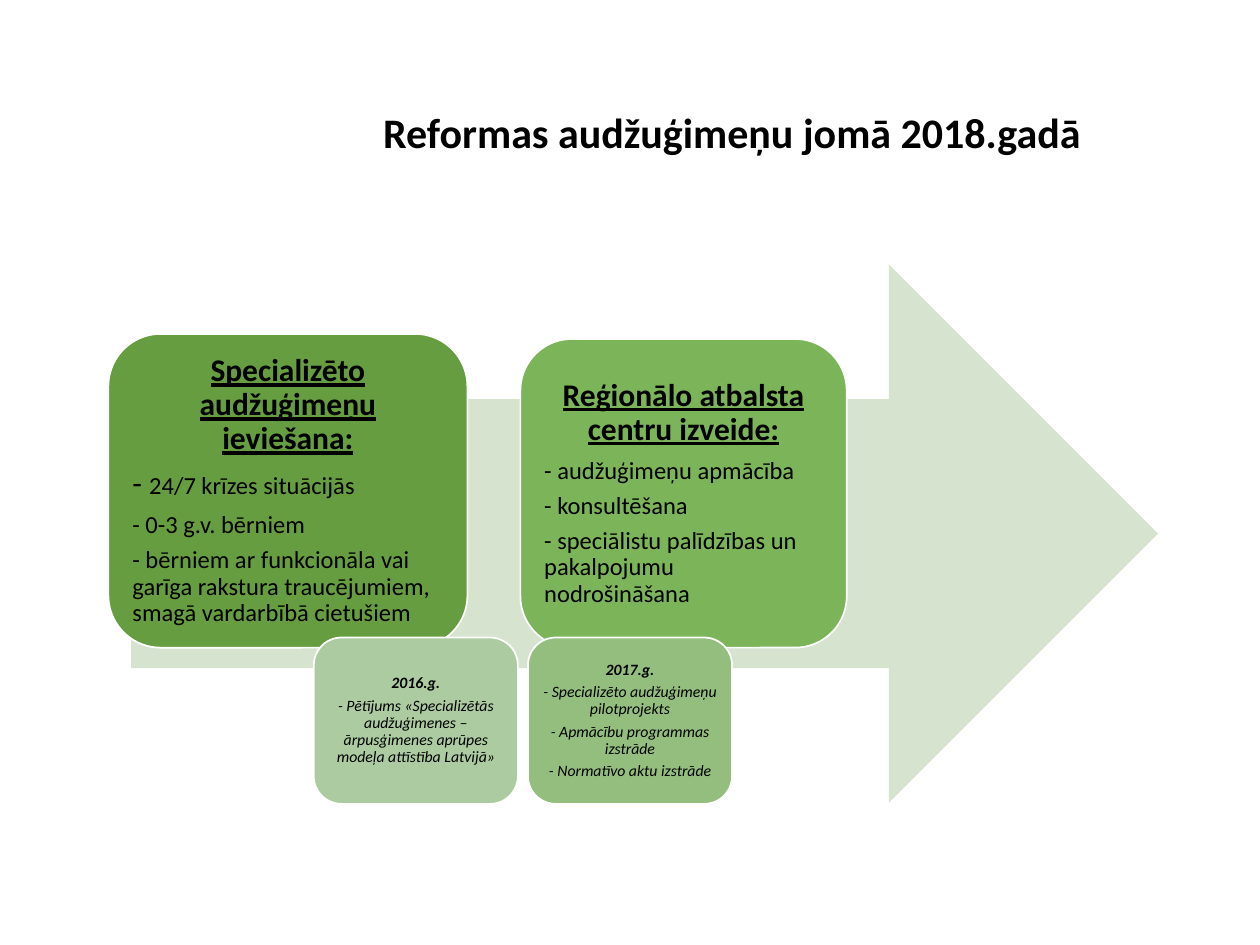
from pptx import Presentation
from pptx.dml.color import RGBColor
from pptx.enum.shapes import MSO_SHAPE
from pptx.enum.text import MSO_ANCHOR, PP_ALIGN
from pptx.util import Inches, Pt

COLORS = {
    "text": "000000",
    "outline": "FFFFFF",
    "arrow": "D5E3CF",
    "specialised": "669D40",
    "regional": "7BB459",
    "year_2017": "94BE7D",
    "year_2016": "ADCBA0",
}
TITLE = {"size": Pt(24), "bold": True}
HEADING = {"size": Pt(18), "bold": True, "underline": True}
LARGE_DASH = {"size": Pt(18)}
BODY = {"size": Pt(14)}
YEAR = {"size": Pt(9), "bold": True, "italic": True}
STEP = {"size": Pt(9), "italic": True}

REFORMS = [
    ("specialised", (0.86, 2.65, 2.85, 2.49), [
        [("Specializēto audžuģimeņu ieviešana:", HEADING)],
        [("- ", LARGE_DASH), ("24/7 krīzes situācijās", BODY)],
        [("- 0-3 g.v. bērniem", BODY)],
        [("- bērniem ar funkcionāla vai garīga rakstura traucējumiem, "
          "smagā vardarbībā cietušiem", BODY)],
    ]),
    ("regional", (4.13, 2.69, 2.59, 2.45), [
        [("Reģionālo atbalsta centru izveide:", HEADING)],
        [("- audžuģimeņu apmācība", BODY)],
        [("- konsultēšana", BODY)],
        [("- speciālistu palīdzības un pakalpojumu nodrošināšana", BODY)],
    ]),
]
YEARS = [
    ("year_2017", (4.19, 5.06, 1.62, 1.32), [
        [("2017.g.", YEAR)],
        [("- Specializēto audžuģimeņu pilotprojekts", STEP)],
        [("- Apmācību programmas izstrāde", STEP)],
        [("- Normatīvo aktu izstrāde", STEP)],
    ]),
    ("year_2016", (2.49, 5.06, 1.62, 1.32), [
        [("2016.g.", YEAR)],
        [("- Pētījums «Specializētās audžuģimenes – ārpusģimenes aprūpes "
          "modeļa attīstība Latvijā»", STEP)],
    ]),
]


def set_attributes(target, values):
    """Set every attribute named in a dict of format values."""
    for name, value in values.items():
        setattr(target, name, value)


def write_paragraphs(text_frame, paragraphs, body_alignment):
    """Write a centred heading and the body paragraphs below it."""
    for index, runs in enumerate(paragraphs):
        paragraph = text_frame.add_paragraph() if index else text_frame.paragraphs[0]
        largest = max(run_format["size"].pt for _, run_format in runs)
        set_attributes(paragraph, {
            "alignment": body_alignment if index else PP_ALIGN.CENTER,
            "line_spacing": 0.9,
            "space_after": Pt(round(0.35 * largest, 1)),
        })
        for text, run_format in runs:
            run = paragraph.add_run()
            run.text = text
            set_attributes(run.font, {"name": "Calibri", **run_format})
            run.font.color.rgb = RGBColor.from_string(COLORS["text"])


def add_title(slide, text):
    """Add the slide title."""
    box = slide.shapes.add_textbox(Inches(2.12), Inches(0.84), Inches(7.38), Inches(0.85))
    box.text_frame.word_wrap = True
    write_paragraphs(box.text_frame, [[(text, TITLE)]], PP_ALIGN.CENTER)


def add_filled_shape(slide, kind, bounds, color):
    """Add a flat preset shape without an outline."""
    shape = slide.shapes.add_shape(kind, *map(Inches, bounds))
    shape.shadow.inherit = False
    shape.fill.solid()
    shape.fill.fore_color.rgb = RGBColor.from_string(COLORS[color])
    shape.line.fill.background()
    return shape


def add_card(slide, color, bounds, paragraphs, margin, body_alignment):
    """Add a rounded card with a white outline and its text."""
    card = add_filled_shape(slide, MSO_SHAPE.ROUNDED_RECTANGLE, bounds, color)
    card.line.color.rgb = RGBColor.from_string(COLORS["outline"])
    card.line.width = Pt(1)
    sides = ("left", "top", "right", "bottom")
    set_attributes(card.text_frame, {
        "word_wrap": True,
        "vertical_anchor": MSO_ANCHOR.MIDDLE,
        **{f"margin_{side}": Inches(margin) for side in sides},
    })
    write_paragraphs(card.text_frame, paragraphs, body_alignment)


def main():
    """Build the slide on the foster family reforms."""
    presentation = Presentation()
    presentation.slide_width = Inches(10)
    presentation.slide_height = Inches(7.5)
    slide = presentation.slides.add_slide(presentation.slide_layouts[6])
    add_title(slide, "Reformas audžuģimeņu jomā 2018.gadā")
    add_filled_shape(slide, MSO_SHAPE.RIGHT_ARROW, (1.04, 2.1, 8.15, 4.27), "arrow")
    for reform in REFORMS:
        add_card(slide, *reform, 0.07, PP_ALIGN.LEFT)
    for year in YEARS:
        add_card(slide, *year, 0.04, PP_ALIGN.CENTER)
    presentation.save("out.pptx")


if __name__ == "__main__":
    main()
